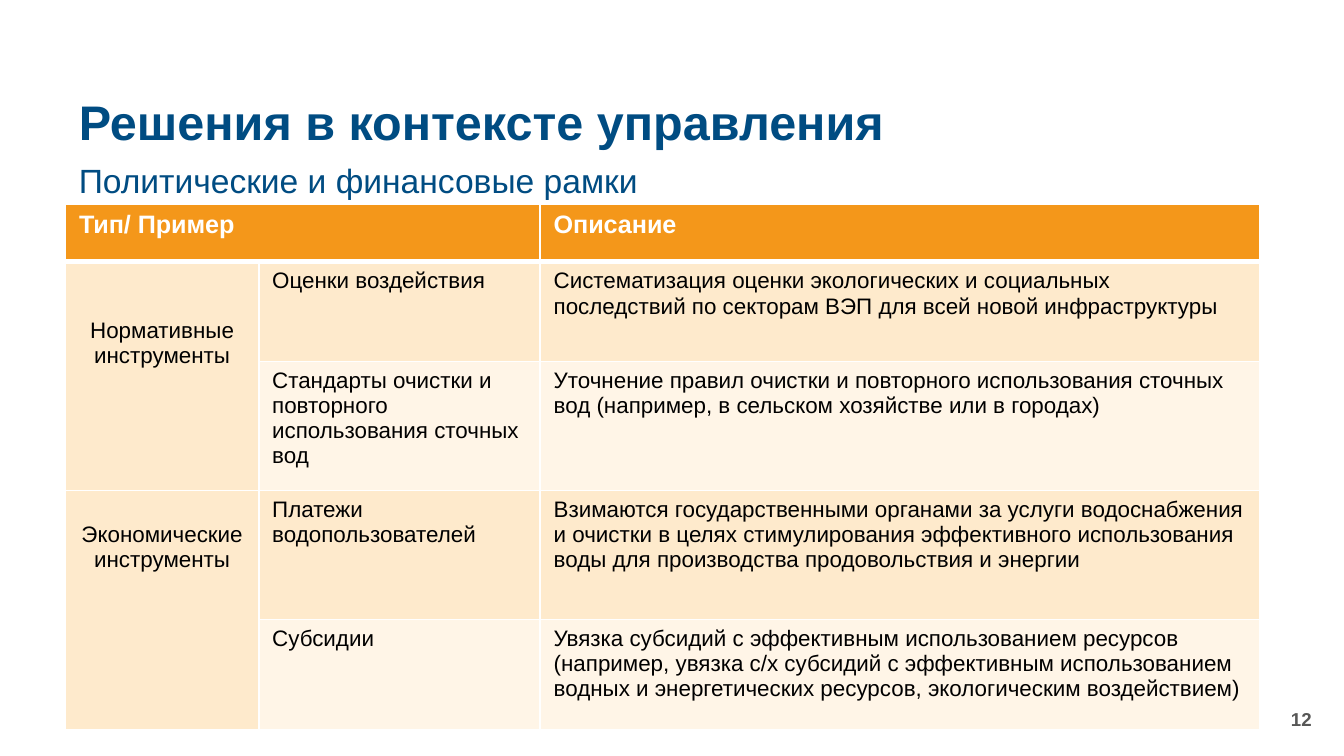
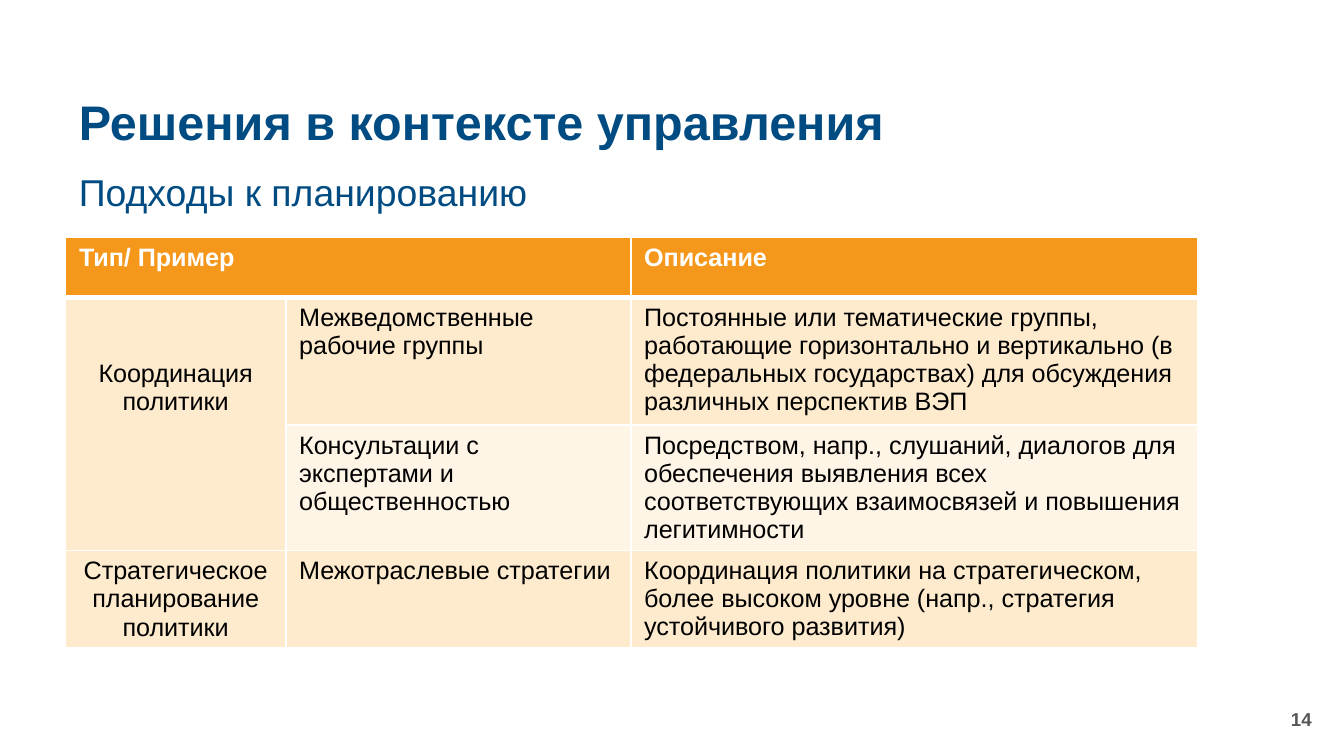
"""Builds two slides with tables of governance solutions."""
from lxml import etree
from pptx import Presentation
from pptx.dml.color import RGBColor
from pptx.enum.text import MSO_ANCHOR, MSO_AUTO_SIZE, PP_ALIGN
from pptx.oxml.ns import qn
from pptx.util import Cm, Pt

LEFT, CENTER, RIGHT = PP_ALIGN.LEFT, PP_ALIGN.CENTER, PP_ALIGN.RIGHT
TOP, MIDDLE = MSO_ANCHOR.TOP, MSO_ANCHOR.MIDDLE
NO_AUTOFIT = MSO_AUTO_SIZE.NONE

FONT = "Arial"
BLUE = RGBColor(0x00, 0x4C, 0x82)
GRAY = RGBColor(0x57, 0x57, 0x56)
ORANGE = RGBColor(0xF4, 0x97, 0x1A)
WHITE = RGBColor(0xFF, 0xFF, 0xFF)
BLACK = RGBColor(0x00, 0x00, 0x00)
BANDS = (RGBColor(0xFE, 0xEA, 0xCC), RGBColor(0xFF, 0xF5, 0xE7))

TITLE = "Решения в контексте управления"
HEADERS = ("Тип/ Пример", "Описание")
HEADER_SIZE = 13.5
MARGIN_LEFT = 1.24
TEXT_WIDTH = 23.8
CELL_TOP = 0.13
THIN, THICK = 1, 3

SLIDES = [
    {
        "number": "12",
        "subtitle": "Политические и финансовые рамки",
        "subtitle_top": 3.1,
        "subtitle_size": 18,
        "table_top": 3.86,
        "columns": (3.65, 5.32, 13.59),
        "rows": (1.09, 1.88, 2.44, 2.44, 2.08),
        "size": 12,
        "groups": [
            ("Нормативные инструменты", 1.07, [
                ("Оценки воздействия",
                 "Систематизация оценки экологических и социальных последствий "
                 "по секторам ВЭП для всей новой инфраструктуры"),
                ("Стандарты очистки и повторного использования сточных вод",
                 "Уточнение правил очистки и повторного использования сточных "
                 "вод (например, в сельском хозяйстве или в городах)"),
            ]),
            ("Экономические инструменты", 0.6, [
                ("Платежи водопользователей",
                 "Взимаются государственными органами за услуги водоснабжения "
                 "и очистки в целях стимулирования эффективного использования "
                 "воды для производства продовольствия и энергии"),
                ("Субсидии",
                 "Увязка субсидий с эффективным использованием ресурсов "
                 "(например, увязка с/х субсидий с эффективным использованием "
                 "водных и энергетических ресурсов, экологическим воздействием)"),
            ]),
        ],
    },
    {
        "number": "14",
        "subtitle": "Подходы к планированию",
        "subtitle_top": 3.3,
        "subtitle_size": 20,
        "table_top": 4.48,
        "columns": (4.16, 6.52, 10.71),
        "rows": (1.14, 2.41, 2.37, 1.82),
        "size": 13.5,
        "groups": [
            ("Координация политики", 1.19, [
                ("Межведомственные рабочие группы",
                 "Постоянные или тематические группы, работающие горизонтально "
                 "и вертикально (в федеральных государствах) для обсуждения "
                 "различных перспектив ВЭП"),
                ("Консультации с экспертами и общественностью",
                 "Посредством, напр., слушаний, диалогов для обеспечения "
                 "выявления всех соответствующих взаимосвязей и повышения "
                 "легитимности"),
            ]),
            ("Стратегическое планирование политики", CELL_TOP, [
                ("Межотраслевые стратегии",
                 "Координация политики на стратегическом, более высоком уровне "
                 "(напр., стратегия устойчивого развития)"),
            ]),
        ],
    },
]


def write(frame, text, size, color, bold=False, align=LEFT):
    paragraph = frame.paragraphs[0]
    paragraph.alignment = align
    run = paragraph.add_run()
    run.text = text
    font = run.font
    font.name, font.size, font.bold = FONT, Pt(size), bold
    font.color.rgb = color
    return paragraph


def place(shape, left, top, width, height, anchor, margins):
    shape.left, shape.top = Cm(left), Cm(top)
    shape.width, shape.height = Cm(width), Cm(height)
    frame = shape.text_frame
    frame.word_wrap = True
    frame.auto_size = NO_AUTOFIT
    frame.vertical_anchor = anchor
    frame.margin_left, frame.margin_top, frame.margin_right, frame.margin_bottom = map(Cm, margins)
    return frame


def add_texts(slide, content):
    frame = place(slide.shapes.title, MARGIN_LEFT, 1.6, TEXT_WIDTH, 1.5, MIDDLE,
                  (0.25, 0.13, 0.25, 0.13))
    write(frame, TITLE, 26, BLUE, bold=True).line_spacing = 0.9

    frame = place(slide.placeholders[1], MARGIN_LEFT, content["subtitle_top"], TEXT_WIDTH, 0.76,
                  TOP, (0.25, 0, 0.2, 0))
    properties = frame.paragraphs[0]._p.get_or_add_pPr()
    properties.set("marL", "0")
    properties.set("indent", "0")
    etree.SubElement(properties, qn("a:buNone"))
    paragraph = write(frame, content["subtitle"], content["subtitle_size"], BLUE)
    paragraph.line_spacing = 0.9
    paragraph.space_before = Pt(0)

    number_box = slide.shapes.add_textbox(0, 0, 0, 0)
    frame = place(number_box, 19.33, 13.21, 5.71, 0.76, MIDDLE, (0.25, 0.13, 0.25, 0.13))
    write(frame, content["number"], 10, GRAY, bold=True, align=RIGHT)


def style_cell(cell, fill, top=THIN, bottom=THIN):
    properties = cell._tc.get_or_add_tcPr()
    sides = (("L", THIN), ("R", THIN), ("T", top), ("B", bottom))
    for position, (side, width) in enumerate(sides):
        line = etree.Element(qn(f"a:ln{side}"), w=str(Pt(width)))
        solid = etree.SubElement(line, qn("a:solidFill"))
        etree.SubElement(solid, qn("a:srgbClr"), val=str(WHITE))
        properties.insert(position, line)
    cell.fill.solid()
    cell.fill.fore_color.rgb = fill


def add_table(slide, content):
    columns, rows, size = content["columns"], content["rows"], content["size"]
    table = slide.shapes.add_table(
        len(rows), len(columns), Cm(MARGIN_LEFT), Cm(content["table_top"]),
        Cm(sum(columns)), Cm(sum(rows))).table
    table.horz_banding = False
    for column, width in zip(table.columns, columns):
        column.width = Cm(width)
    for row, height in zip(table.rows, rows):
        row.height = Cm(height)

    for cell in table.rows[0].cells:
        style_cell(cell, ORANGE, bottom=THICK)
    table.cell(0, 0).merge(table.cell(0, 1))
    for column, header in zip((0, 2), HEADERS):
        write(table.cell(0, column).text_frame, header, HEADER_SIZE, WHITE, bold=True)

    first = 1
    for group, top_margin, examples in content["groups"]:
        for offset, texts in enumerate(examples):
            row = first + offset
            top = THICK if row == 1 else THIN
            style_cell(table.cell(row, 0), BANDS[0], top)
            for column, text in enumerate(texts, 1):
                cell = table.cell(row, column)
                style_cell(cell, BANDS[offset % 2], top)
                write(cell.text_frame, text, size, BLACK)
        group_cell = table.cell(first, 0)
        if len(examples) > 1:
            group_cell.merge(table.cell(row, 0))
        group_cell.margin_top = Cm(top_margin)
        write(group_cell.text_frame, group, size, BLACK, align=CENTER)
        first += len(examples)


def main():
    presentation = Presentation()
    presentation.slide_width, presentation.slide_height = Cm(25.4), Cm(14.29)
    for content in SLIDES:
        slide = presentation.slides.add_slide(presentation.slide_layouts[1])
        add_texts(slide, content)
        add_table(slide, content)
    presentation.save("out.pptx")


if __name__ == "__main__":
    main()
